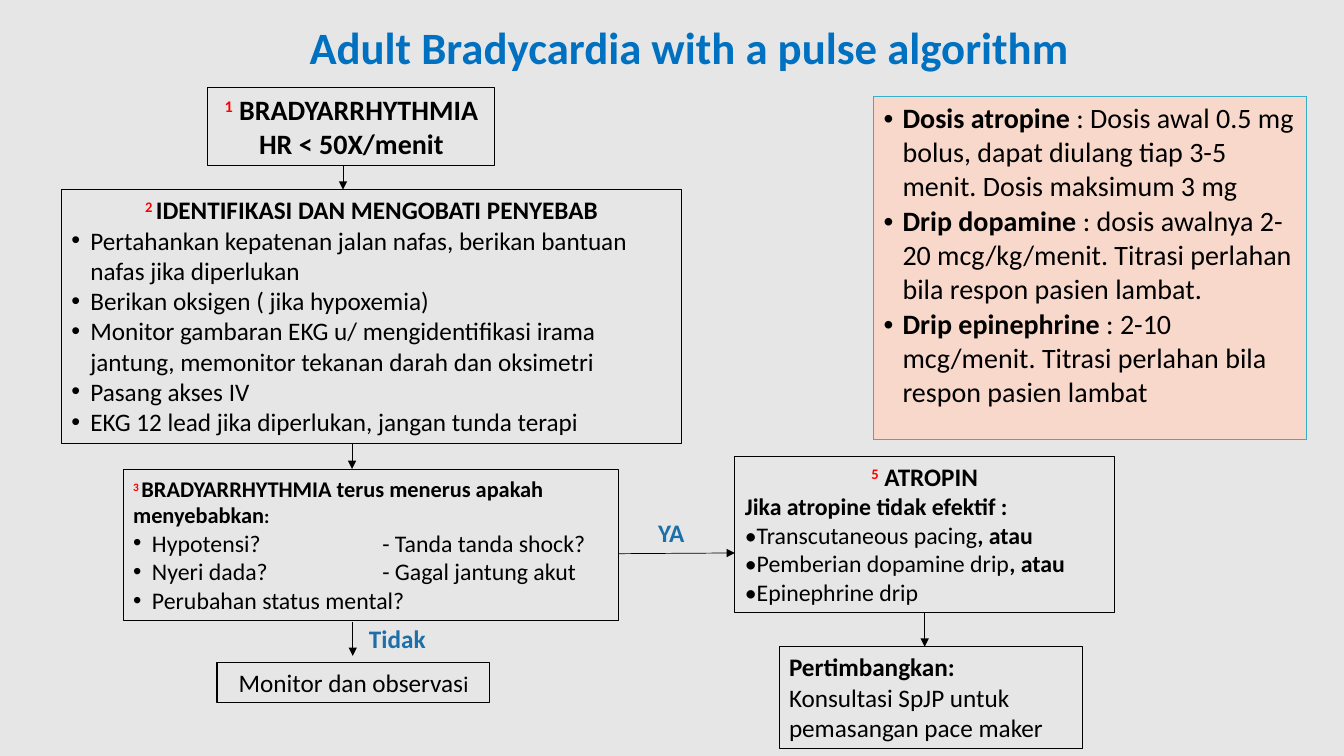
import pptx
import pptx.util
import pptx.dml.color
import pptx.enum.shapes
import pptx.enum.text
import pptx.oxml
import pptx.oxml.ns

Pt = pptx.util.Pt
ALIGN = pptx.enum.text.PP_ALIGN
ANCHOR = pptx.enum.text.MSO_ANCHOR
FIT = pptx.enum.text.MSO_AUTO_SIZE
COLORS = {"back": "E7E6E6", "title": "0070C0", "ink": "000000", "mark": "FF0000",
          "label": "1D6FA9", "dose": "F8D8CA", "edge": "36AFCE"}
FONT = "Calibri"
HANG = 13.5


def color(name):
    return pptx.dml.color.RGBColor.from_string(COLORS[name])


def node(parent, xml):
    """Append a drawing element to its parent."""
    tag, rest = xml.split(" ", 1)
    item = pptx.oxml.parse_xml(f"<a:{tag} {pptx.oxml.ns.nsdecls('a')} {rest}")
    parent.append(item)


# Text: each piece is a string or a (string, format) pair
def write(frame, *pieces, first=False, align=ALIGN.LEFT, bullet=False, tab=None, **base):
    para = frame.paragraphs[0] if first else frame.add_paragraph()
    para.alignment = align
    if bullet:
        props = para._p.get_or_add_pPr()
        props.set("marL", str(Pt(HANG)))
        props.set("indent", str(-Pt(HANG)))
        node(props, 'buFont typeface="Arial"/>')
        node(props, 'buChar char="•"/>')
        if tab:
            node(props, f'tabLst ><a:tab pos="{Pt(tab)}" algn="l"/></a:tabLst>')
    for piece in pieces:
        text, own = (piece, {}) if isinstance(piece, str) else piece
        look = {"size": 18, "bold": False, "tint": "ink", "sup": False, **base, **own}
        run = para.add_run()
        run.text = text
        run.font.name = FONT
        run.font.size = Pt(look["size"])
        run.font.bold = look["bold"]
        run.font.color.rgb = color(look["tint"])
        if look["sup"]:
            run._r.get_or_add_rPr().set("baseline", "30000")
    return para


def mark(text, **look):
    return text, {"tint": "mark", "sup": True, "bold": True, **look}


def panel(slide, box):
    shape = slide.shapes.add_shape(pptx.enum.shapes.MSO_SHAPE.RECTANGLE, *map(Pt, box))
    shape.shadow.inherit = False
    shape.fill.background()
    shape.line.color.rgb = color("ink")
    shape.line.width = Pt(0.75)
    frame = shape.text_frame
    frame.word_wrap = True
    frame.vertical_anchor = ANCHOR.TOP
    frame.auto_size = FIT.SHAPE_TO_FIT_TEXT
    return shape


def label(slide, box, text, align=ALIGN.LEFT):
    frame = slide.shapes.add_textbox(*map(Pt, box)).text_frame
    frame.word_wrap = True
    frame.auto_size = FIT.SHAPE_TO_FIT_TEXT
    write(frame, text, first=True, align=align, bold=True, tint="label")


def arrow(slide, x, y, right, down):
    line = slide.shapes.add_connector(pptx.enum.shapes.MSO_CONNECTOR.STRAIGHT,
                                      Pt(x), Pt(y), Pt(x + right), Pt(y + down))
    line.line.color.rgb = color("ink")
    line.line.width = Pt(0.5)
    node(line.line._get_or_add_ln(), 'tailEnd type="triangle"/>')
    node(line._element.spPr, "effectLst />")
    return line


def title(slide, box):
    head = slide.shapes.title
    head.left, head.top, head.width, head.height = map(Pt, box)
    head.text_frame.word_wrap = True
    head.text_frame.vertical_anchor = ANCHOR.MIDDLE
    para = write(head.text_frame, "Adult Bradycardia with a pulse algorithm", first=True,
                 align=ALIGN.CENTER, size=32, bold=True, tint="title")
    para.line_spacing = 0.9


# Steps 1 and 2: finding and causes
def start(slide, box):
    x, y, wide, high = box
    frame = panel(slide, (x + 104.5, y, 205, 55.5)).text_frame
    look = {"align": ALIGN.CENTER, "size": 20, "bold": True}
    write(frame, mark("1"), " BRADYARRHYTHMIA", first=True, **look)
    write(frame, "HR < 50X/menit", **look)

    frame = panel(slide, (x, y + 73, wide, high - 73)).text_frame
    write(frame, mark("2 "), "IDENTIFIKASI DAN MENGOBATI PENYEBAB", first=True,
          align=ALIGN.CENTER, bold=True)
    for item in (
        "Pertahankan kepatenan jalan nafas, berikan bantuan nafas jika diperlukan",
        "Berikan oksigen ( jika hypoxemia)",
        "Monitor gambaran EKG u/ mengidentifikasi irama jantung, "
        "memonitor tekanan darah dan oksimetri",
        "Pasang akses IV",
        "EKG 12 lead jika diperlukan, jangan tunda terapi",
    ):
        write(frame, item, bullet=True)
    arrow(slide, x + 201, y + 55.5, 0, 17.5)
    arrow(slide, x + 207.5, y + high, 0, 18)


# Step 3: signs, with the two ways out
def signs(slide, box):
    x, y, wide, high = box
    frame = panel(slide, (x, y, wide, 108)).text_frame
    write(frame, mark("3 ", size=14), "BRADYARRHYTHMIA terus menerus apakah menyebabkan",
          (":", {"size": 14}), first=True, size=16, bold=True)
    for item in ("Hypotensi?\t- Tanda tanda shock?", "Nyeri dada?\t- Gagal jantung akut",
                 "Perubahan status mental?"):
        write(frame, item, bullet=True, tab=178, size=17)

    frame = panel(slide, (x + 67, y + high - 29, 195, 29)).text_frame
    write(frame, "Monitor dan observas", ("i", {"size": 16}), first=True, align=ALIGN.CENTER)
    arrow(slide, x + 164, y + 108.5, 0, 24.5)
    label(slide, (x + 168.5, y + 106.5, 58, 29), "Tidak")
    arrow(slide, x + wide, y + 60, 83.5, -0.5)
    label(slide, (x + wide + 15, y + 30.5, 46, 29), "YA", ALIGN.CENTER)


# Step 5: treatment and referral
def treat(slide, box):
    x, y, wide, high = box
    drug = panel(slide, (x, y, wide, 111.5))
    frame = drug.text_frame
    write(frame, mark("5"), " ATROPIN", first=True, align=ALIGN.CENTER, bold=True)
    write(frame, "Jika atropine tidak efektif :", size=17, bold=True)
    strong = (", atau", {"bold": True})
    write(frame, "•Transcutaneous pacing", strong, size=17)
    write(frame, "•Pemberian dopamine drip", strong, size=17)
    write(frame, "•Epinephrine drip", size=17)

    frame = panel(slide, (x + 31.5, y + high - 73, 217, 73)).text_frame
    write(frame, "Pertimbangkan:", first=True, bold=True)
    write(frame, "Konsultasi SpJP untuk pemasangan pace maker")
    line = arrow(slide, x + wide / 2, y + 111.5, 0, 24.5)
    line.begin_connect(drug, 2)


# Dose table
def doses(slide, box):
    table = slide.shapes.add_table(1, 1, *map(Pt, box)).table
    table.first_row = table.horz_banding = False
    cell = table.cell(0, 0)
    for side in "LRTB":
        node(cell._tc.get_or_add_tcPr(), f'ln{side} w="{Pt(0.5)}"><a:solidFill>'
             f'<a:srgbClr val="{COLORS["edge"]}"/></a:solidFill></a:ln{side}>')
    cell.fill.solid()
    cell.fill.fore_color.rgb = color("dose")
    rows = (
        ("Dosis atropine", " : Dosis awal 0.5 mg bolus, dapat diulang tiap 3-5 menit. "
         "Dosis maksimum 3 mg"),
        ("Drip dopamine ", ": dosis awalnya 2-20 mcg/kg/menit. Titrasi perlahan "
         "bila respon pasien lambat."),
        ("Drip epinephrine", " : 2-10 mcg/menit. Titrasi perlahan bila respon pasien lambat"),
    )
    for i, (name, text) in enumerate(rows):
        write(cell.text_frame, (name, {"bold": True}), text, first=i == 0, bullet=True, size=20)


def main():
    deck = pptx.Presentation()
    deck.slide_width, deck.slide_height = Pt(960), Pt(540)
    slide = deck.slides.add_slide(deck.slide_layouts[5])
    slide.background.fill.solid()
    slide.background.fill.fore_color.rgb = color("back")
    title(slide, (190, 0, 605, 72))
    start(slide, (44, 62.5, 443, 254.5))
    signs(slide, (88, 335.5, 353.5, 166.5))
    treat(slide, (525, 326, 271, 209))
    doses(slide, (624, 69, 309, 245))
    deck.save("out.pptx")


if __name__ == "__main__":
    main()
